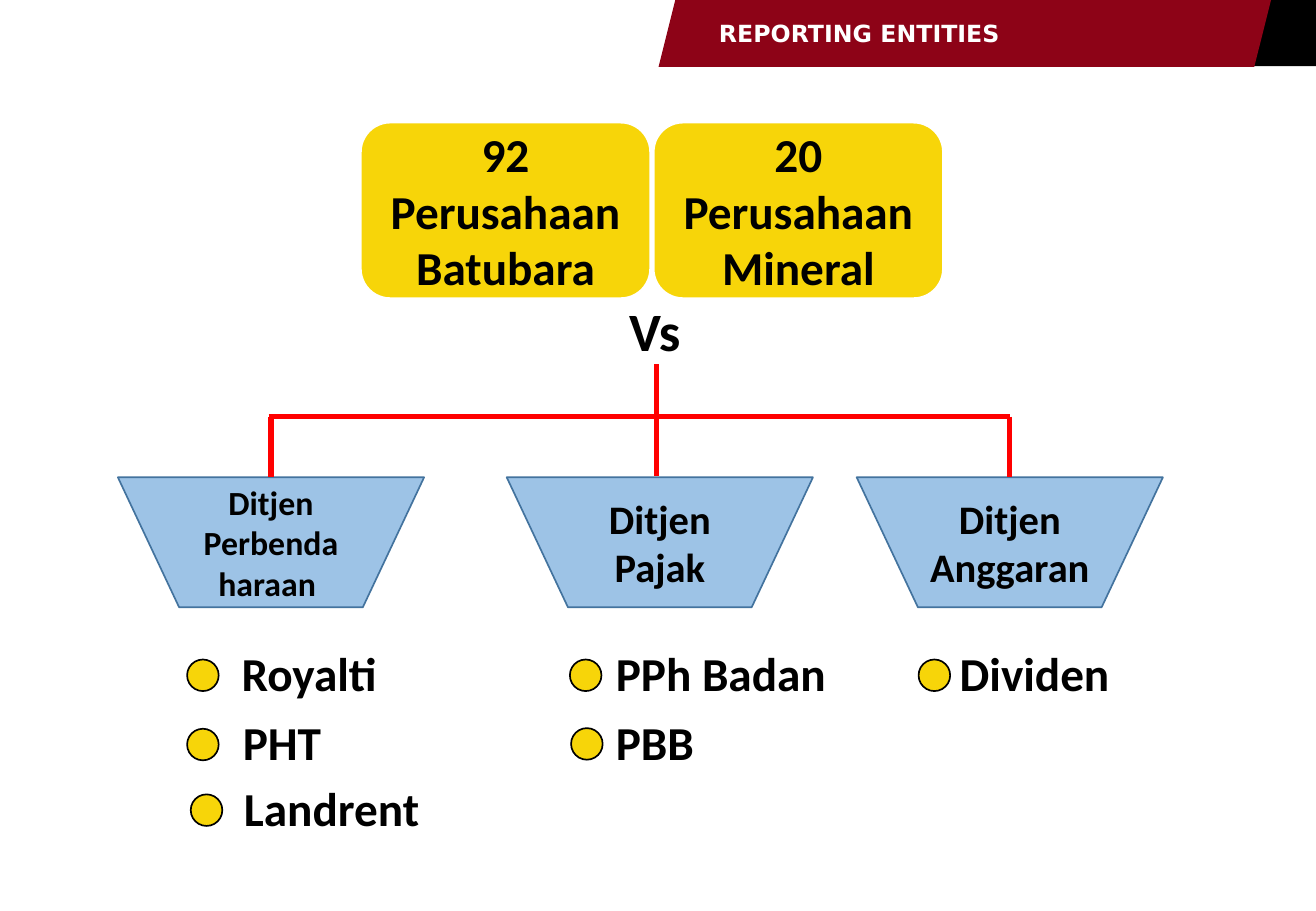
"""Build the reporting entities slide: mining companies versus three directorates."""
from lxml import etree
from pptx import Presentation
from pptx.dml.color import RGBColor
from pptx.enum.shapes import MSO_CONNECTOR, MSO_SHAPE
from pptx.enum.text import MSO_ANCHOR, PP_ALIGN
from pptx.oxml.ns import qn
from pptx.util import Pt

LEFT, CENTER = PP_ALIGN.LEFT, PP_ALIGN.CENTER
MIDDLE = MSO_ANCHOR.MIDDLE
STRAIGHT = MSO_CONNECTOR.STRAIGHT
BAND, CORNER = MSO_SHAPE.PARALLELOGRAM, MSO_SHAPE.FLOWCHART_MANUAL_INPUT
COMPANY, BULLET = MSO_SHAPE.ROUNDED_RECTANGLE, MSO_SHAPE.OVAL
DIRECTORATE = MSO_SHAPE.FLOWCHART_MANUAL_OPERATION
BLACK, WHITE, YELLOW, RED = "000000", "FFFFFF", "F7D509", "FF0000"
BLUE, DARK_BLUE, MAROON = "9DC3E6", "43739E", "8D0317"

prs = Presentation()
prs.slide_width, prs.slide_height = Pt(779.76), Pt(540)
slide = prs.slides.add_slide(prs.slide_layouts[6])


def add_block(kind, x, y, w, h, fill, outline=None):
    block = slide.shapes.add_shape(kind, Pt(x), Pt(y), Pt(w), Pt(h))
    block.shadow.inherit = False
    block.fill.solid()
    block.fill.fore_color.rgb = RGBColor.from_string(fill)
    if outline:
        block.line.color.rgb = RGBColor.from_string(outline)
        block.line.width = Pt(1)
    else:
        block.line.fill.background()
    return block


def write(holder, text, size, align=CENTER, color=BLACK, font="Calibri"):
    frame = holder.text_frame
    frame.word_wrap = True
    frame.text = text
    for paragraph in frame.paragraphs:
        paragraph.alignment = align
        paragraph.font.name = font
        paragraph.font.size = Pt(size)
        paragraph.font.bold = True
        paragraph.font.color.rgb = RGBColor.from_string(color)
    return frame


corner = add_block(CORNER, 727.2, -14.4, 39.6, 67.68, BLACK)
corner.rotation = 90
corner._element.spPr.get_or_add_xfrm().set("flipV", "1")

title_band = add_block(BAND, 390.24, 0, 362.88, 39.6, MAROON)
title = write(title_band, "REPORTING ENTITIES", 14, LEFT, WHITE, "DejaVu Sans")
title.vertical_anchor = MIDDLE
title.margin_left = title.margin_right = Pt(1.44)

for x, text in [(213.84, "92\nPerusahaan Batubara"), (387.36, "20 Perusahaan Mineral")]:
    company = add_block(COMPANY, x, 72.72, 171.36, 104, YELLOW, WHITE)
    write(company, text, 28).vertical_anchor = MIDDLE

versus = slide.shapes.add_textbox(Pt(365.76), Pt(172.8), Pt(60), Pt(46))
write(versus, "Vs", 32, LEFT)

directorates = [
    (69.84, "Ditjen Perbenda\nharaan ", 20),
    (300.24, "Ditjen Pajak", 24),
    (507.6, "Ditjen Anggaran", 24),
]
for x, text, size in directorates:
    directorate = add_block(DIRECTORATE, x, 282.96, 181.44, 77.04, BLUE, DARK_BLUE)
    write(directorate, text, size).vertical_anchor = MIDDLE

branches = [
    (159.12, 246.96, 598.32, 246.96),
    (160.56, 246.96, 160.56, 282.96),
    (598.32, 246.96, 598.32, 282.96),
    (388.8, 216, 388.8, 282.24),
]
for ends in branches:
    branch = slide.shapes.add_connector(STRAIGHT, *map(Pt, ends))
    branch.line.color.rgb = RGBColor.from_string(RED)
    branch.line.width = Pt(3)
    etree.SubElement(branch._element.spPr, qn("a:effectLst"))

revenues = [
    (110.88, 136.08, 390.96, "Royalti"),
    (110.88, 136.8, 432, "PHT"),
    (113.04, 137.52, 470.88, "Landrent"),
    (337.68, 357.84, 390.96, "PPh Badan"),
    (338.4, 357.84, 431.64, "PBB"),
    (544.32, 561.6, 390.96, "Dividen"),
]
for bullet_x, label_x, y, text in revenues:
    add_block(BULLET, bullet_x, y, 18.72, 18.72, YELLOW, BLACK)
    label = slide.shapes.add_textbox(Pt(label_x), Pt(y - 12.5), Pt(150), Pt(41))
    write(label, text, 28, LEFT)

prs.save("out.pptx")
